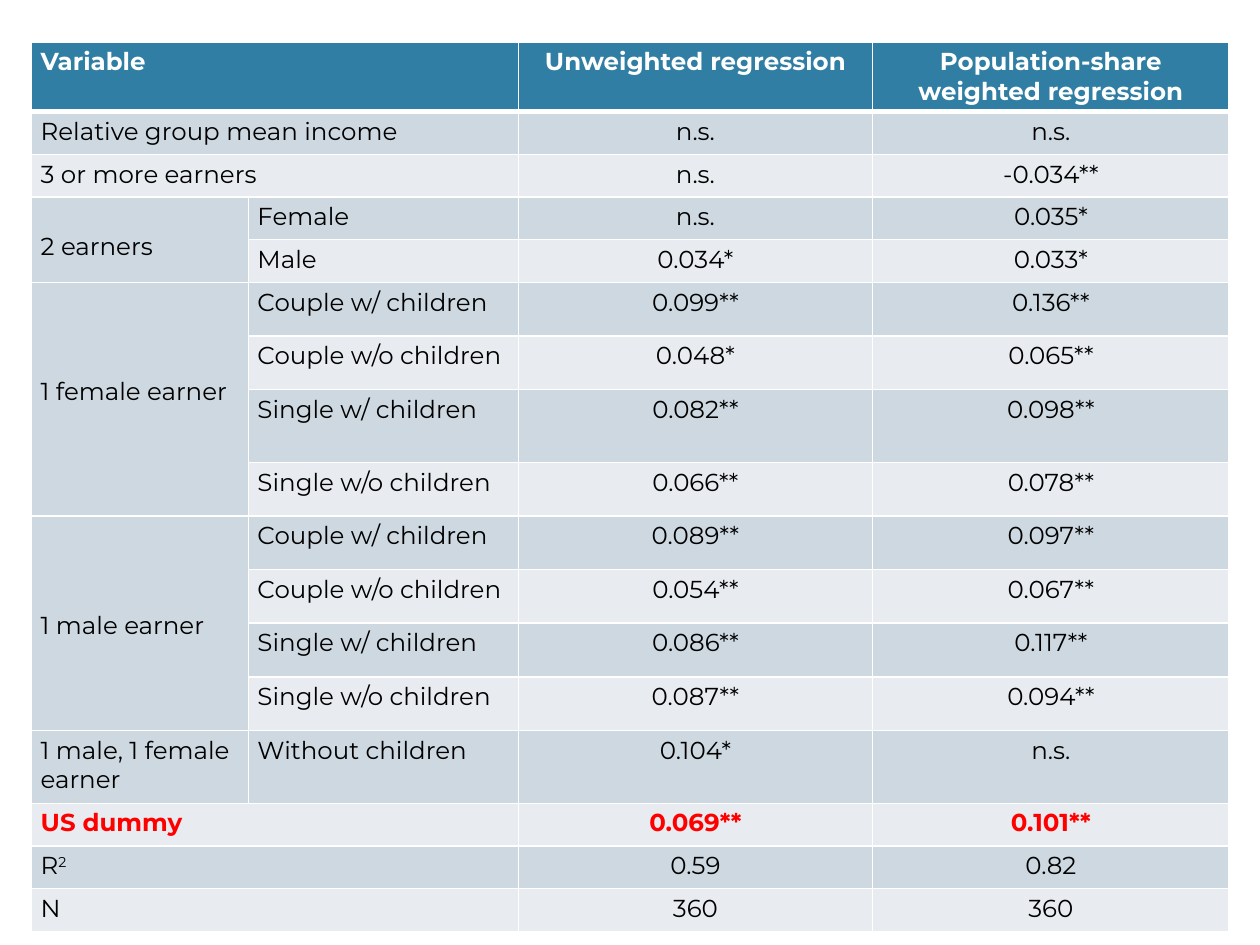
import pptx
import pptx.dml.color
import pptx.enum.text
import pptx.oxml
import pptx.oxml.ns
import pptx.util

Cm = pptx.util.Cm
Align = pptx.enum.text.PP_ALIGN

HEADER = ("Variable", None, "Unweighted regression", "Population-share weighted regression")
HOUSEHOLDS = ["Couple w/ children", "Couple w/o children", "Single w/ children", "Single w/o children"]
FEMALE_EARNER = [("0.099**", "0.136**"), ("0.048*", "0.065**"), ("0.082**", "0.098**"), ("0.066**", "0.078**")]
MALE_EARNER = [("0.089**", "0.097**"), ("0.054**", "0.067**"), ("0.086**", "0.117**"), ("0.087**", "0.094**")]
GROUPS = [
    ("Relative group mean income", [(None, "n.s.", "n.s.")]),
    ("3 or more earners", [(None, "n.s.", "-0.034**")]),
    ("2 earners", [("Female", "n.s.", "0.035*"), ("Male", "0.034*", "0.033*")]),
    ("1 female earner", [(name, *values) for name, values in zip(HOUSEHOLDS, FEMALE_EARNER)]),
    ("1 male earner", [(name, *values) for name, values in zip(HOUSEHOLDS, MALE_EARNER)]),
    ("1 male, 1 female\nearner", [("Without children", "0.104*", "n.s.")]),
    ("US dummy", [(None, "0.069**", "0.101**")]),
    ("R^2", [(None, "0.59", "0.82")]),
    ("N", [(None, "360", "360")]),
]
HIGHLIGHTED = "US dummy"

COLUMN_WIDTHS = [4.37, 5.44, 7.14, 7.19]
LOW, MIDDLE, HIGH = 0.86, 1.08, 1.47
ROW_HEIGHTS = [1.24] + [LOW] * 4 + [MIDDLE] * 2 + [HIGH] + [MIDDLE] * 5 + [HIGH] + [LOW] * 3
LABEL_OFFSET_LINES = {1: 0, 2: 1, 4: 3}
LINE_HEIGHT = 0.6
MARGIN_X, MARGIN_Y = 0.18, 0.1

THEME = {
    "font": "Montserrat", "size": 14, "superscript": "30000",
    "header": "307EA3", "bands": ["E8ECF0", "CDD8E0"], "border": "FFFFFF",
    "header_text": "FFFFFF", "text": "000000", "highlight": "FF0000",
    "thin": 1, "thick": 3,
}


def rgb(name):
    return pptx.dml.color.RGBColor.from_string(name)


def set_border(cell, side, points):
    properties = cell._tc.get_or_add_tcPr()
    line = pptx.oxml.parse_xml(
        f'<a:ln{side} {pptx.oxml.ns.nsdecls("a")} w="{pptx.util.Pt(points)}">'
        f'<a:solidFill><a:srgbClr val="{THEME["border"]}"/></a:solidFill></a:ln{side}>'
    )
    properties.insert("LRTB".index(side), line)


def style_cell(cell, row, band):
    cell.fill.solid()
    cell.fill.fore_color.rgb = rgb(band)
    cell.margin_left = cell.margin_right = Cm(MARGIN_X)
    cell.margin_top = cell.margin_bottom = Cm(MARGIN_Y)
    for side in "LRTB":
        under_header = (row, side) in [(0, "B"), (1, "T")]
        set_border(cell, side, THEME["thick" if under_header else "thin"])


def write_cell(cell, text, alignment, color, bold):
    frame = cell.text_frame
    for number, line in enumerate(text.split("\n")):
        para = frame.add_paragraph() if number else frame.paragraphs[0]
        para.alignment = alignment
        for level, part in enumerate(line.split("^")):
            span = para.add_run()
            span.text = part
            span.font.name = THEME["font"]
            span.font.size = pptx.util.Pt(THEME["size"])
            span.font.bold = bold
            span.font.color.rgb = rgb(color)
            if level:
                span._r.get_or_add_rPr().set("baseline", THEME["superscript"])


def write_row(table, row, texts, color, bold):
    for column, text in enumerate(texts):
        if text:
            alignment = Align.CENTER if column > 1 else Align.LEFT
            write_cell(table.cell(row, column), text, alignment, color, bold)
    if texts[1] is None:
        table.cell(row, 0).merge(table.cell(row, 1))


def main():
    deck = pptx.Presentation()
    deck.slide_width, deck.slide_height = Cm(25.4), Cm(19.05)
    page = deck.slides.add_slide(deck.slide_layouts[6])
    table = page.shapes.add_table(
        len(ROW_HEIGHTS), len(COLUMN_WIDTHS), Cm(0.64), Cm(0.85),
        Cm(sum(COLUMN_WIDTHS)), Cm(sum(ROW_HEIGHTS)),
    ).table
    for column, width in zip(table.columns, COLUMN_WIDTHS):
        column.width = Cm(width)
    for row, height in enumerate(ROW_HEIGHTS):
        table.rows[row].height = Cm(height)
        band = THEME["bands"][row % 2] if row else THEME["header"]
        for cell in table.rows[row].cells:
            style_cell(cell, row, band)

    write_row(table, 0, HEADER, THEME["header_text"], True)
    row = 1
    for label, members in GROUPS:
        bold = label == HIGHLIGHTED
        color = THEME["highlight" if bold else "text"]
        for number, member in enumerate(members):
            write_row(table, row + number, ("" if number else label, *member), color, bold)
        label_cell = table.cell(row, 0)
        if len(members) > 1:
            label_cell.merge(table.cell(row + len(members) - 1, 0))
            label_cell.margin_top = Cm(MARGIN_Y + LINE_HEIGHT * LABEL_OFFSET_LINES[len(members)])
        row += len(members)

    deck.save("out.pptx")


if __name__ == "__main__":
    main()
